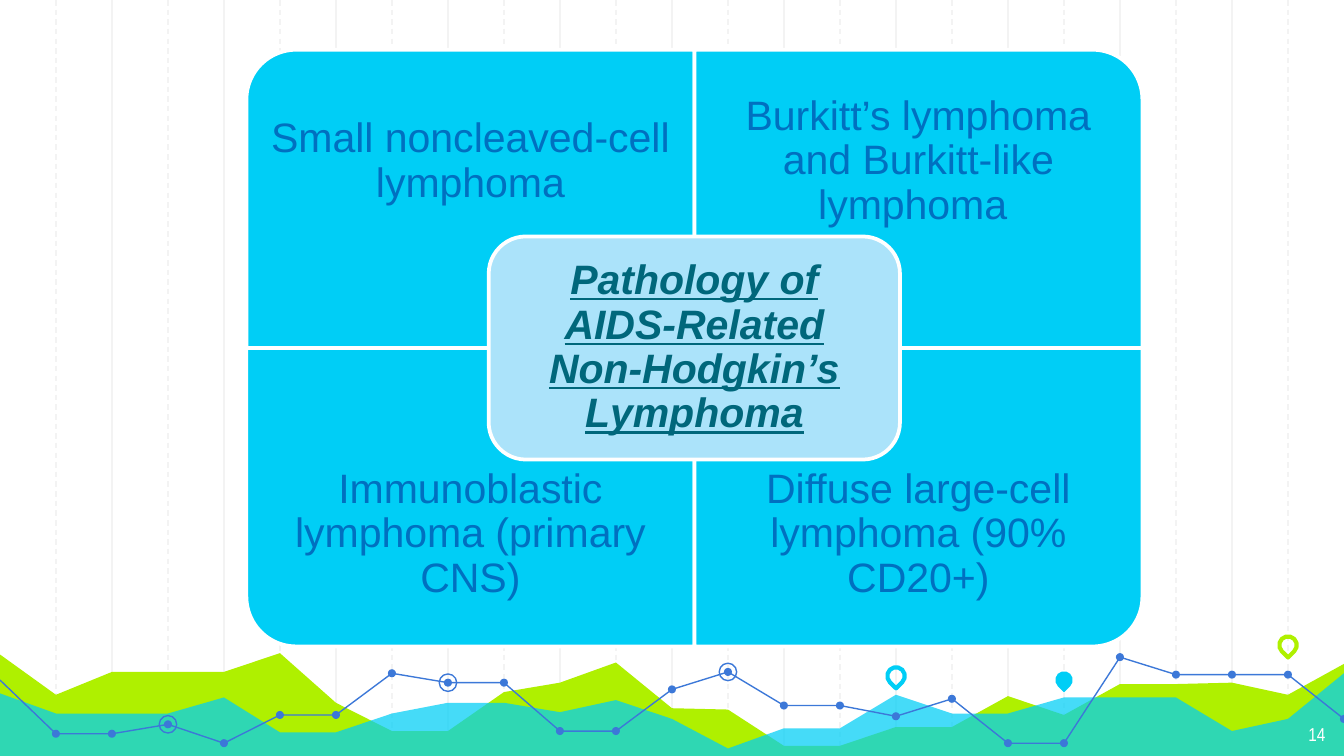
"""Build a slide of four lymphoma cards around a central heading."""
from dataclasses import dataclass
from itertools import pairwise

from lxml.etree import SubElement
from pptx import Presentation
from pptx.dml.color import RGBColor
from pptx.enum.dml import MSO_LINE
from pptx.enum.shapes import MSO_CONNECTOR, MSO_SHAPE as SHAPE
from pptx.enum.text import MSO_ANCHOR as ANCHOR, MSO_AUTO_SIZE, PP_ALIGN as ALIGN
from pptx.oxml.ns import qn
from pptx.util import Inches, Pt


@dataclass(frozen=True)
class Theme:
    cyan: str = "00CEF6"
    lime: str = "AFF000"
    trend: str = "3C78D8"
    rule: str = "F3F3F3"
    white: str = "FFFFFF"
    center: str = "ABE3FA"
    heading_text: str = "00677B"
    card_text: str = "0070C0"
    font: str = "Arial"
    number_font: str = "Arial Narrow"
    size: int = 22
    number_size: int = 10
    hairline: float = 0.75
    border: float = 2
    pin_line: float = 2.25


THEME = Theme()
HEADING = "Pathology of AIDS-Related\nNon-Hodgkin’s Lymphoma"
CARDS = [
    ("Small noncleaved-cell lymphoma", 0, 0, 270),
    ("Burkitt’s lymphoma and Burkitt-like lymphoma ", 1, 0, 0),
    ("Immunoblastic lymphoma (primary CNS)", 0, 1, 180),
    ("Diffuse large-cell lymphoma (90% CD20+)", 1, 1, 90),
]
PAGE = "14"
LIME_HILLS = [4.87, 5.17, 5, 5, 5, 4.86, 5.23, 5.44, 5.44, 5.15, 5.08, 4.93, 5.27,
              5.28, 5.55, 5.55, 5.41, 5.41, 5.18, 5.32, 5.09, 5.09, 5.08, 5.17, 4.94]
CYAN_HILLS = [5.16, 5.31, 5.31, 5.31, 5.19, 5.45, 5.45, 5.31, 5.23, 5.23, 5.3, 5.21, 5.35,
              5.57, 5.42, 5.42, 5.17, 5.31, 5.31, 5.19, 5.19, 5.19, 5.44, 5.35, 5.01]
TREND = [5.06, 5.46, 5.46, 5.39, 5.53, 5.32, 5.32, 5.01, 5.08, 5.08, 5.44, 5.44, 5.13,
         5, 5.25, 5.25, 5.33, 5.2, 5.53, 5.53, 4.89, 5.02, 5.02, 5.02, 5.35]
TREND_BREAKS = [0, 11, 20, 24]
RINGED = [3, 8, 13]
PINS = [(16, 5.03, THEME.cyan, False), (19, 5.06, THEME.cyan, True),
        (23, 4.8, THEME.lime, False)]

WIDTH = 10
HEIGHT = WIDTH * 9 / 16
STEP = WIDTH / 24
DOT, RING = 0.06, 0.13
LEFT, TOP, CARD_W, CARD_H = 4.4 * STEP, 0.37, 8 * STEP, 2.22
LABEL_H = CARD_H * 0.75
CENTER_W, CENTER_H, CENTER_PAD = 3.06, 1.66, 0.08


def rgb(color):
    return RGBColor.from_string(color)


def paint(shape, fill=None, line=None, width=THEME.hairline):
    shape.shadow.inherit = False
    if fill:
        shape.fill.solid()
        shape.fill.fore_color.rgb = rgb(fill)
    else:
        shape.fill.background()
    if line:
        shape.line.color.rgb = rgb(line)
        shape.line.width = Pt(width)
    else:
        shape.line.fill.background()


def add_centered(slide, kind, x, y, w, h, turn=0, **style):
    shape = slide.shapes.add_shape(kind, *map(Inches, (x - w / 2, y - h / 2, w, h)))
    shape.rotation = turn
    paint(shape, **style)
    return shape


def add_path(slide, points, closed, **style):
    start, *rest = [(Inches(x), Inches(y)) for x, y in points]
    builder = slide.shapes.build_freeform(*start)
    builder.add_line_segments(rest, close=closed)
    shape = builder.convert_to_shape()
    paint(shape, **style)
    return shape


def write(box, text, color, inset, size=THEME.size, font=THEME.font,
          align=ALIGN.CENTER, anchor=ANCHOR.MIDDLE, spacing=0.9):
    frame = box.text_frame
    frame.word_wrap = True
    frame.auto_size = MSO_AUTO_SIZE.NONE
    frame.vertical_anchor = anchor
    frame.margin_left = frame.margin_right = Inches(inset)
    frame.margin_top = frame.margin_bottom = Inches(inset)
    paragraph = frame.paragraphs[0]
    paragraph.text = text
    paragraph.alignment = align
    paragraph.line_spacing = spacing
    paragraph.font.name = font
    paragraph.font.size = Pt(size)
    paragraph.font.color.rgb = rgb(color)
    return paragraph


def add_rules(slide):
    for column in range(1, 24):
        x = Inches(column * STEP)
        rule = slide.shapes.add_connector(MSO_CONNECTOR.STRAIGHT, x, 0, x, Inches(HEIGHT))
        rule.line.color.rgb = rgb(THEME.rule)
        rule.line.width = Pt(THEME.hairline)
        if column % 2:
            rule.line.dash_style = MSO_LINE.DASH
        SubElement(rule._element.spPr, qn("a:effectLst"))


def add_landscape(slide):
    for heights, color, opacity in ((LIME_HILLS, THEME.lime, 100), (CYAN_HILLS, THEME.cyan, 73)):
        ridge = [(i * STEP, y) for i, y in enumerate(heights)]
        hills = add_path(slide, ridge + [(WIDTH, HEIGHT), (0, HEIGHT)], True, fill=color)
        if opacity < 100:
            tint = hills._element.spPr.find(qn("a:solidFill")).find(qn("a:srgbClr"))
            SubElement(tint, qn("a:alpha"), val=str(opacity * 1000))
    for column, y, color, filled in PINS:
        style = {"fill": color} if filled else {"line": color, "width": THEME.pin_line}
        add_centered(slide, SHAPE.TEAR, column * STEP, y, RING, RING, 135, **style)


def add_trend(slide):
    points = [(i * STEP, y) for i, y in enumerate(TREND)]
    for first, last in pairwise(TREND_BREAKS):
        add_path(slide, points[first:last + 1], False, line=THEME.trend)
    for x, y in points[1:]:
        add_centered(slide, SHAPE.OVAL, x, y, DOT, DOT, fill=THEME.trend)
    for column in RINGED:
        add_centered(slide, SHAPE.OVAL, *points[column], RING, RING, line=THEME.trend)


def add_cards(slide):
    for text, column, row, turn in CARDS:
        x, y = LEFT + column * CARD_W, TOP + row * CARD_H
        size = (CARD_H, CARD_W) if turn % 180 else (CARD_W, CARD_H)
        add_centered(slide, SHAPE.ROUND_1_RECTANGLE, x + CARD_W / 2, y + CARD_H / 2, *size, turn,
                     fill=THEME.cyan, line=THEME.white, width=THEME.border)
        label_top = y + row * (CARD_H - LABEL_H)
        label = slide.shapes.add_textbox(*map(Inches, (x, label_top, CARD_W, LABEL_H)))
        write(label, text, THEME.card_text, 0.17)


def add_heading(slide):
    middle, center = LEFT + CARD_W, TOP + CARD_H
    add_centered(slide, SHAPE.ROUNDED_RECTANGLE, middle, center, CENTER_W, CENTER_H,
                 fill=THEME.center, line=THEME.white, width=THEME.border)
    heading = slide.shapes.title
    w, h = CENTER_W - 2 * CENTER_PAD, CENTER_H - 2 * CENTER_PAD
    heading.left, heading.top = Inches(middle - w / 2), Inches(center - h / 2)
    heading.width, heading.height = Inches(w), Inches(h)
    font = write(heading, HEADING, THEME.heading_text, 0.09).font
    font.bold = font.italic = font.underline = True
    heading._element.getparent().append(heading._element)


def main():
    deck = Presentation()
    deck.slide_width, deck.slide_height = Inches(WIDTH), Inches(HEIGHT)
    slide = deck.slides.add_slide(deck.slide_layouts[5])
    add_rules(slide)
    add_landscape(slide)
    add_trend(slide)
    number = slide.shapes.add_textbox(*map(Inches, (9.36, 5.28, 0.6, 0.35)))
    write(number, PAGE, THEME.white, 0.1, THEME.number_size, THEME.number_font,
          ALIGN.RIGHT, ANCHOR.TOP, 1)
    add_cards(slide)
    add_heading(slide)
    deck.save("out.pptx")


if __name__ == "__main__":
    main()
